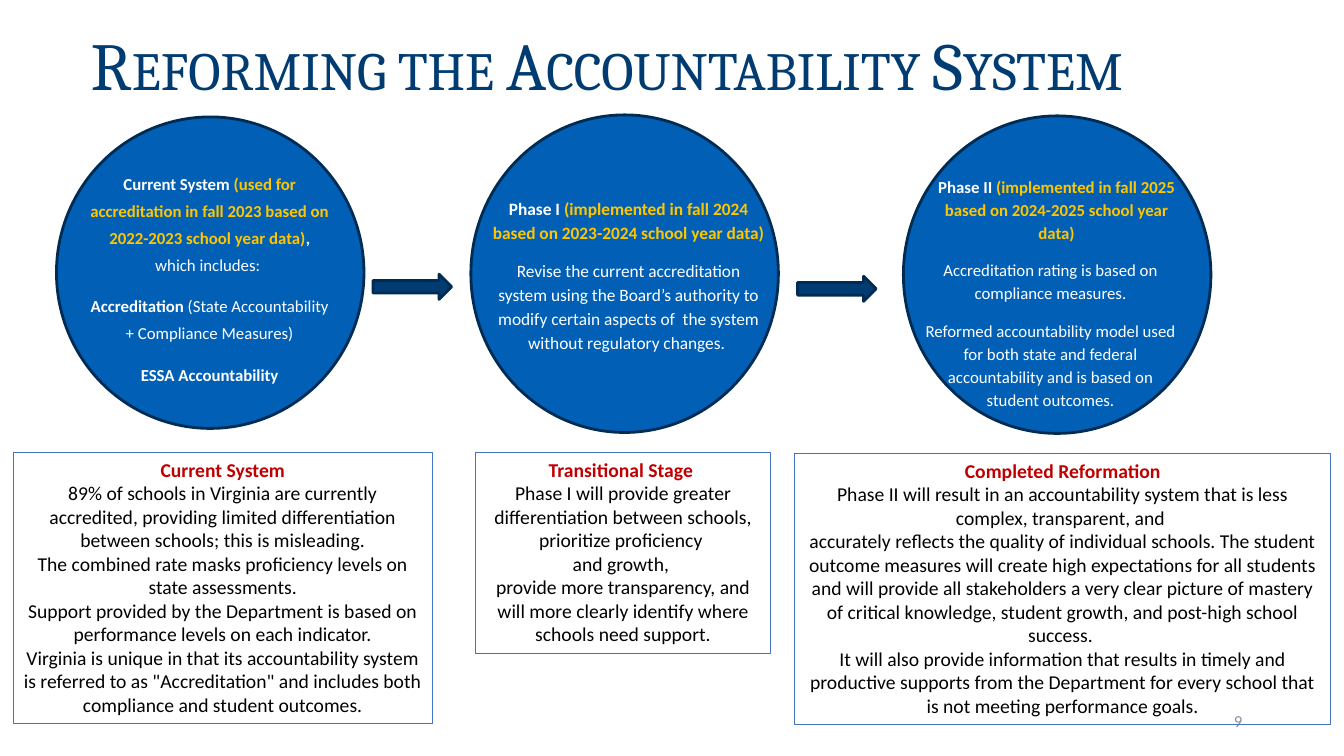
"""Build the slide on the three stages of reforming the accountability system."""
from pptx import Presentation
from pptx.dml.color import RGBColor
from pptx.enum.shapes import MSO_SHAPE
from pptx.enum.text import MSO_ANCHOR, MSO_AUTO_SIZE, PP_ALIGN
from pptx.util import Inches, Pt

OVAL, ARROW, RECTANGLE = MSO_SHAPE.OVAL, MSO_SHAPE.RIGHT_ARROW, MSO_SHAPE.RECTANGLE
LEFT, CENTER, RIGHT = PP_ALIGN.LEFT, PP_ALIGN.CENTER, PP_ALIGN.RIGHT
BOTTOM, MIDDLE, TOP = MSO_ANCHOR.BOTTOM, MSO_ANCHOR.MIDDLE, MSO_ANCHOR.TOP
GROW = MSO_AUTO_SIZE.SHAPE_TO_FIT_TEXT
NO_FIT = MSO_AUTO_SIZE.NONE

NAVY, BLUE, EDGE, FRAME = "003C71", "0160B6", "002C54", "4472C4"
WHITE, GOLD, RED, BLACK, GRAY = "FFFFFF", "FFC600", "C00000", "000000", "888FA3"

TITLE = "Reforming the Accountability System"
PAGE_NUMBER = "9"

CIRCLES = [(0.56, 1.16, 3.05, 3.09), (4.67, 1.14, 3.05, 3.15), (8.96, 1.15, 3.05, 3.15)]
ARROWS = [(3.7, 2.72, 0.78, 0.25), (7.91, 2.74, 0.78, 0.25)]

STAGES = [
    {
        "at": (0.65, 1.6, 2.74, 1.96), "size": 12, "spacing": 1.35, "indents": (0.12, 0.12, 0.12),
        "text": [
            [("Current System ", WHITE, True),
             ("(used for accreditation in fall 2023 based on 2022-2023 school year data)", GOLD, True),
             (",", WHITE, True), (" which includes: ", WHITE, False)],
            [("Accreditation", WHITE, True),
             (" (State Accountability + Compliance Measures)", WHITE, False)],
            [("ESSA Accountability", WHITE, True)],
        ],
    },
    {
        "at": (4.67, 1.89, 3.01, 1.89), "size": 12.4, "spacing": 1.15, "indents": (0.12, 0.12),
        "text": [
            [("Phase I ", WHITE, True),
             ("(implemented in fall 2024 based on 2023-2024 school year data)", GOLD, True)],
            [("Revise the current accreditation system using the Board’s authority to modify "
              "certain aspects of  the system without regulatory changes. ", WHITE, False)],
        ],
    },
    {
        "at": (9.04, 1.67, 2.76, 2.82), "size": 12, "spacing": 1.15, "indents": (0.12, 0, 0),
        "text": [
            [("Phase II ", WHITE, True),
             ("(implemented in fall 2025 based on 2024-2025 school year data)", GOLD, True)],
            [("Accreditation rating is based on compliance measures.", WHITE, False)],
            [("Reformed accountability model used for both state and federal accountability "
              "and is based on student outcomes.", WHITE, False)],
        ],
    },
]

PANELS = [
    ((0.13, 4.49, 4.16, 2.69), "Current System", [
        "89% of schools in Virginia are currently accredited, providing limited differentiation "
        "between schools; this is misleading.",
        "The combined rate masks proficiency levels on state assessments.",
        "Support provided by the Department is based on performance levels on each indicator.",
        'Virginia is unique in that its accountability system is referred to as "Accreditation" '
        "and includes both compliance and student outcomes.",
    ]),
    ((4.72, 4.49, 2.92, 1.99), "Transitional Stage ", [
        "Phase I will provide greater differentiation between schools, prioritize proficiency ",
        "and growth, ",
        "provide more transparency, and will more clearly identify where schools need support.",
    ]),
    ((7.88, 4.5, 5.32, 2.69), "Completed Reformation", [
        "Phase II will result in an "
        "accountability system that is less complex, transparent, and ",
        "accurately reflects the quality of individual schools. The student outcome measures "
        "will create high expectations for all students and will provide all stakeholders a "
        "very clear picture of mastery of critical knowledge, student growth, and "
        "post-high school success. ",
        "It will also provide information that results in timely and productive supports from "
        "the Department for every school that is not meeting performance goals.",
    ]),
]


def color(value):
    return RGBColor.from_string(value)


def place(at):
    return [Inches(length) for length in at]


def add_figure(page, kind, at, fill, line, width):
    shape = page.shapes.add_shape(kind, *place(at))
    shape.shadow.inherit = False
    if fill:
        shape.fill.solid()
        shape.fill.fore_color.rgb = color(fill)
    else:
        shape.fill.background()
    shape.line.color.rgb = color(line)
    shape.line.width = Pt(width)
    return shape


def write(shape, paragraphs, size, font="Calibri", align=CENTER, anchor=TOP,
          spacing=1.0, gap=0, indents=None, fit=NO_FIT):
    frame = shape.text_frame
    frame.word_wrap = True
    frame.auto_size = fit
    frame.vertical_anchor = anchor
    for index, spans in enumerate(paragraphs):
        para = frame.add_paragraph() if index else frame.paragraphs[0]
        para.alignment = align
        para.line_spacing = spacing
        para.space_before = Pt(gap if index else 0)
        if indents and indents[index]:
            para._p.get_or_add_pPr().set("marL", str(Inches(indents[index])))
        for text, tint, bold in spans:
            span = para.add_run()
            span.text = text
            span.font.name = font
            span.font.size = Pt(size)
            span.font.bold = bold
            span.font.color.rgb = color(tint)


def main():
    deck = Presentation()
    deck.slide_width, deck.slide_height = Inches(13.33), Inches(7.5)
    page = deck.slides.add_slide(deck.slide_layouts[5])

    title = page.shapes.title
    title.left, title.top, title.width, title.height = place((0, 0, 13.33, 1.09))
    title.text_frame.margin_left = Inches(0.9)
    write(title, [[(TITLE, NAVY, False)]], 48, "Cambria", LEFT, BOTTOM, 0.9)
    title.text_frame.paragraphs[0].runs[0]._r.get_or_add_rPr().set("cap", "small")

    for at in CIRCLES:
        add_figure(page, OVAL, at, BLUE, EDGE, 2)
    for at in ARROWS:
        add_figure(page, ARROW, at, NAVY, EDGE, 2)
    for stage in STAGES:
        box = page.shapes.add_textbox(*place(stage["at"]))
        write(box, stage["text"], stage["size"], spacing=stage["spacing"],
              gap=10, indents=stage["indents"])

    number = page.shapes.add_textbox(*place((9.42, 6.95, 3, 0.4)))
    write(number, [[(PAGE_NUMBER, GRAY, False)]], 12, align=RIGHT, anchor=MIDDLE)

    for at, heading, lines in PANELS:
        panel = add_figure(page, RECTANGLE, at, None, FRAME, 0.75)
        paragraphs = [[(heading, RED, True)]] + [[(line, BLACK, False)] for line in lines]
        write(panel, paragraphs, 14, fit=GROW)

    deck.save("out.pptx")


if __name__ == "__main__":
    main()
